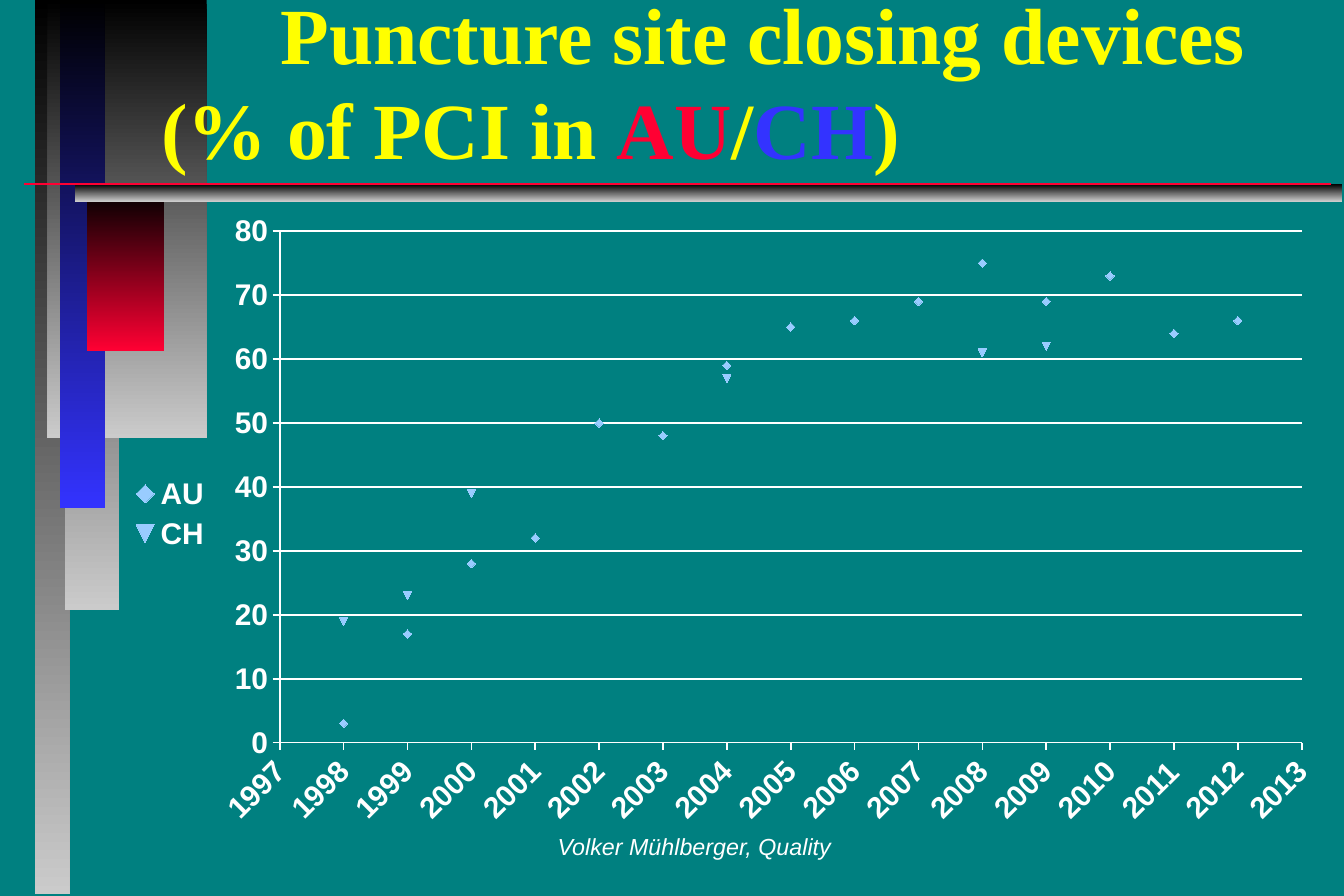
import pptx
import pptx.util
import pptx.chart.data
import pptx.dml.color
import pptx.enum.chart
import pptx.enum.shapes
import pptx.enum.text
import pptx.oxml
import pptx.oxml.ns
from lxml import etree

Pt = pptx.util.Pt
RGB = pptx.dml.color.RGBColor
TEAL = RGB(0x00, 0x80, 0x80)
BLACK = RGB(0x00, 0x00, 0x00)
WHITE = RGB(0xFF, 0xFF, 0xFF)
GREY = RGB(0xCB, 0xCB, 0xCB)
RED = RGB(0xFF, 0x00, 0x33)
BLUE = RGB(0x33, 0x33, 0xFF)
YELLOW = RGB(0xFF, 0xFF, 0x00)
SKY = RGB(0x99, 0xCC, 0xFF)

# Content
TITLE = [
    ("Puncture site closing devices (% of PCI in ", YELLOW),
    ("AU", RED), ("/", YELLOW), ("CH", BLUE), (")", YELLOW),
]
FOOTER = "Volker Mühlberger, Quality"
DATA = {
    "AU": dict(zip(range(1998, 2013), [
        3, 17, 28, 32, 50, 48, 59, 65, 66, 69, 75, 69, 73, 64, 66])),
    "CH": {1998: 19, 1999: 23, 2000: 39, 2004: 57, 2008: 61, 2009: 62},
}
# Left, top, width, height, end colour
BARS = [
    (21, 0, 21, 539, GREY),
    (39, 0, 33, 367.5, GREY),
    (28.5, 0, 96, 264, GREY),
    (36, 0, 27, 306, BLUE),
    (52.5, 115, 46.5, 96.5, RED),
    (45, 111, 764, 10.5, GREY),
]
PLOT = {"x": 0.133, "y": 0.071, "w": 0.833, "h": 0.777}

deck = pptx.Presentation()
deck.slide_width, deck.slide_height = Pt(810), Pt(540)
slide = deck.slides.add_slide(deck.slide_layouts[6])
slide.background.fill.solid()
slide.background.fill.fore_color.rgb = TEAL
shapes = slide.shapes


def set_font(font, size, color, name="Arial", bold=False, italic=False):
    font.size, font.name = Pt(size), name
    font.bold, font.italic = bold, italic
    font.color.rgb = color


def add_box(left, top, width, height, anchor, wrap):
    frame = shapes.add_textbox(Pt(left), Pt(top), Pt(width), Pt(height)).text_frame
    frame.word_wrap = wrap
    frame.vertical_anchor = anchor
    return frame


# Gradient bars
for left, top, width, height, color in BARS:
    bar = shapes.add_shape(pptx.enum.shapes.MSO_SHAPE.RECTANGLE,
                           Pt(left), Pt(top), Pt(width), Pt(height))
    bar.shadow.inherit = False
    bar.line.fill.background()
    bar.fill.gradient()
    bar.fill.gradient_angle = 270
    for stop, shade in zip(bar.fill.gradient_stops, (BLACK, color)):
        stop.color.rgb = shade

# Red rule
rule = shapes.add_connector(pptx.enum.shapes.MSO_CONNECTOR.STRAIGHT,
                            Pt(14.5), Pt(111), Pt(802), Pt(111))
rule.line.color.rgb = RED
rule.line.width = Pt(1)
etree.SubElement(rule.element.spPr, pptx.oxml.ns.qn("a:effectLst"))

# Footer
foot = add_box(290.5, 492, 256, 36, pptx.enum.text.MSO_ANCHOR.MIDDLE, False)
foot.text = FOOTER
foot.paragraphs[0].alignment = pptx.enum.text.PP_ALIGN.CENTER
set_font(foot.paragraphs[0].runs[0].font, 14, WHITE, italic=True)

# Title, with its first line indented further
head = add_box(18, 0, 792, 109.5, pptx.enum.text.MSO_ANCHOR.BOTTOM, True)
para = head.paragraphs[0]
props = para._p.get_or_add_pPr()
props.set("marL", str(Pt(72)))
props.set("indent", str(Pt(72)))
for text, color in TITLE:
    run = para.add_run()
    run.text = text
    set_font(run.font, 48, color, "Times New Roman", bold=True)

# Chart
data = pptx.chart.data.XyChartData()
for name, points in DATA.items():
    row = data.add_series(name)
    for year, share in points.items():
        row.add_data_point(year, share)
chart = shapes.add_chart(pptx.enum.chart.XL_CHART_TYPE.XY_SCATTER,
                         Pt(70.25), Pt(111.25), Pt(739.5), Pt(396.75), data).chart
set_font(chart.font, 18, WHITE, bold=True)
chart.has_title = False
chart.has_legend = True
chart.legend.position = pptx.enum.chart.XL_LEGEND_POSITION.LEFT
chart.legend.include_in_layout = False
set_font(chart.legend.font, 18, WHITE, bold=True)

# Markers: the index picks the automatic symbol
for place, row in enumerate(chart.plots[0].series, 1):
    row._element.find(pptx.oxml.ns.qn("c:idx")).set("val", str(place))
    row.format.line.fill.background()
    row.marker.style = pptx.enum.chart.XL_MARKER_STYLE.AUTOMATIC
    row.marker.size = 5
    row.marker.format.fill.solid()
    row.marker.format.fill.fore_color.rgb = SKY
    row.marker.format.line.fill.background()
chart.plots[0].vary_by_categories = False

# Axes
for axis, low, high, step in ((chart.category_axis, 1997, 2013, 1),
                              (chart.value_axis, 0, 80, 10)):
    axis.minimum_scale, axis.maximum_scale = low, high
    axis.major_unit = step
    axis.major_tick_mark = pptx.enum.chart.XL_TICK_MARK.OUTSIDE
    axis.minor_tick_mark = pptx.enum.chart.XL_TICK_MARK.NONE
    axis.tick_labels.number_format = "General"
    axis.tick_labels.number_format_is_linked = False
    axis.format.line.color.rgb = WHITE
    axis.format.line.width = Pt(1)
    set_font(axis.tick_labels.font, 18, WHITE, bold=True)
chart.category_axis.has_major_gridlines = False
chart.value_axis.has_major_gridlines = True
grid = chart.value_axis.major_gridlines.format.line
grid.color.rgb = WHITE
grid.width = Pt(1)
body = chart.category_axis._element.find(".//" + pptx.oxml.ns.qn("a:bodyPr"))
body.set("rot", str(-45 * 60000))

# Plot area
area = chart._chartSpace.chart.plotArea
for old in area.findall(pptx.oxml.ns.qn("c:layout")):
    area.remove(old)
modes = "".join(f'<c:{key}Mode val="edge"/>' for key in "xy")
sizes = "".join(f'<c:{key} val="{val}"/>' for key, val in PLOT.items())
area.insert(0, pptx.oxml.parse_xml(
    f'<c:layout {pptx.oxml.ns.nsdecls("c")}><c:manualLayout>'
    f'<c:layoutTarget val="inner"/>{modes}{sizes}</c:manualLayout></c:layout>'))

deck.save("out.pptx")
